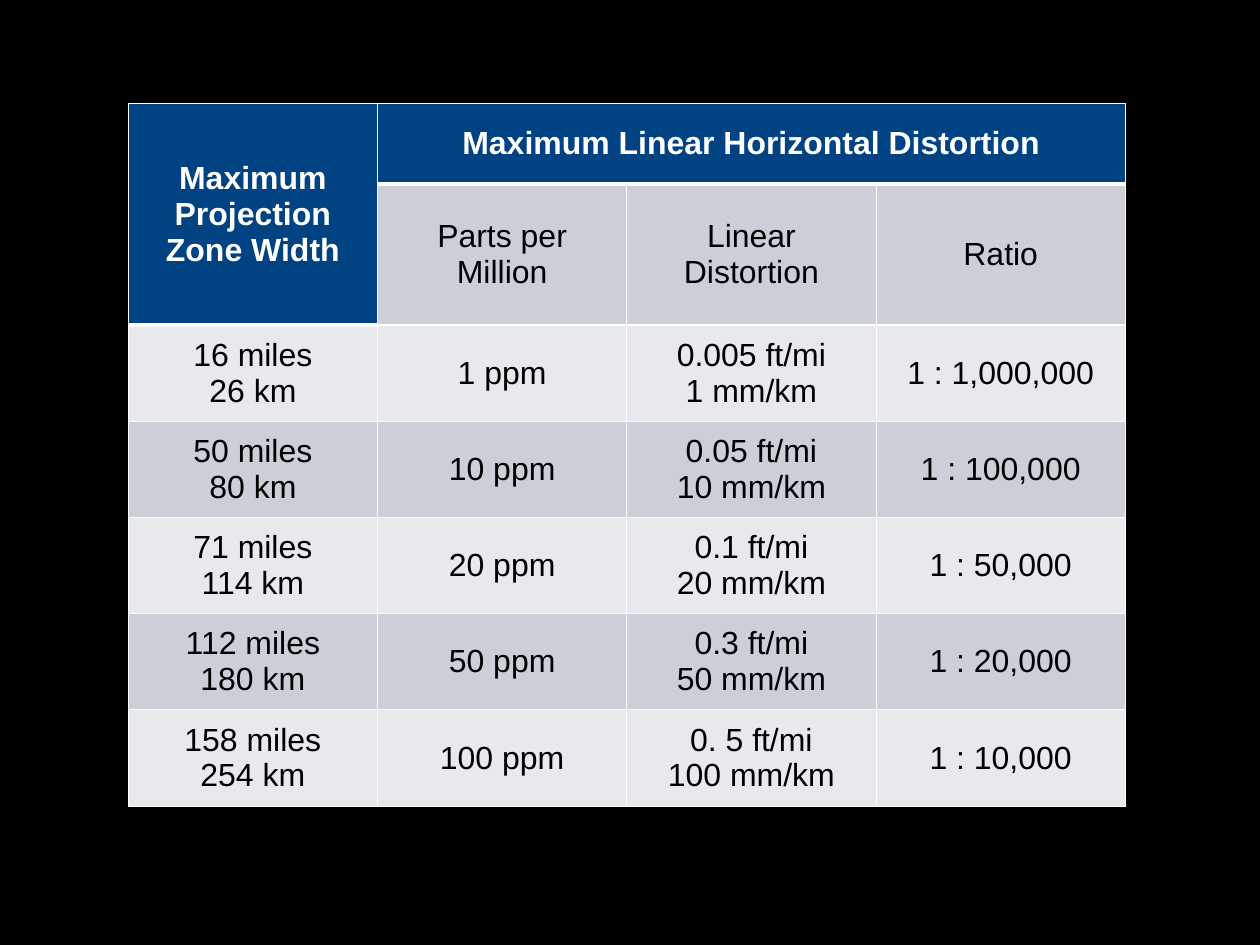
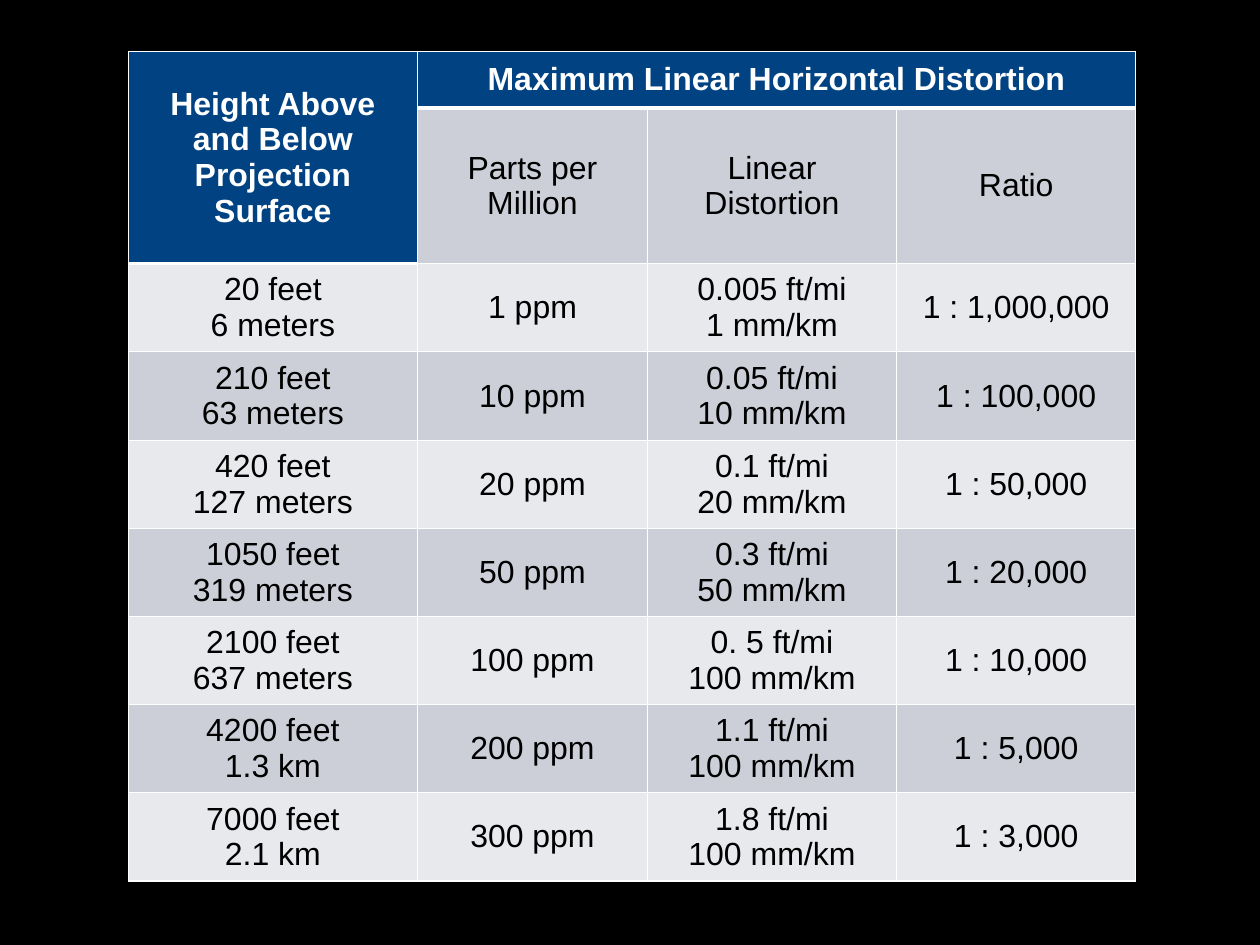
from dataclasses import dataclass

from lxml.etree import SubElement
from pptx import Presentation
from pptx.dml.color import RGBColor
from pptx.enum.text import MSO_ANCHOR, PP_ALIGN
from pptx.oxml.ns import qn
from pptx.presentation import Presentation as Deck
from pptx.table import _Cell as Cell
from pptx.util import Cm, Pt

BLACK = RGBColor(0x00, 0x00, 0x00)
WHITE = RGBColor(0xFF, 0xFF, 0xFF)
NAVY = RGBColor(0x00, 0x42, 0x82)
BAND_DARK = RGBColor(0xCC, 0xCF, 0xD8)
BAND_LIGHT = RGBColor(0xE7, 0xE9, 0xED)

FONT_NAME = "Arial"
FONT_SIZE = Pt(26)
THIN, THICK = Pt(1), Pt(3)
HEADER_ROWS = 2
BLANK_LAYOUT = 6

GROUP_HEADING = "Maximum Linear Horizontal Distortion"
SUBHEADINGS = ("Parts per Million", "Linear Distortion", "Ratio")

# Parts per million, linear distortion and ratio, from least to most distorted
DISTORTIONS = (
    ("1 ppm", "0.005 ft/mi\n1 mm/km", "1 : 1,000,000"),
    ("10 ppm", "0.05 ft/mi\n10 mm/km", "1 : 100,000"),
    ("20 ppm", "0.1 ft/mi\n20 mm/km", "1 : 50,000"),
    ("50 ppm", "0.3 ft/mi\n50 mm/km", "1 : 20,000"),
    ("100 ppm", "0. 5 ft/mi\n100 mm/km", "1 : 10,000"),
    ("200 ppm", "1.1 ft/mi\n100 mm/km", "1 : 5,000"),
    ("300 ppm", "1.8 ft/mi\n100 mm/km", "1 : 3,000"),
)


@dataclass(frozen=True)
class DistortionTable:
    """Lengths are in centimetres."""

    heading: str
    extents: tuple[str, ...]
    top: float
    column_widths: tuple[float, ...]
    header_heights: tuple[float, float]
    row_height: float
    left: float = 3.68


TABLES = (
    DistortionTable(
        heading="Maximum Projection Zone Width",
        extents=(
            "16 miles\n26 km",
            "50 miles\n80 km",
            "71 miles\n114 km",
            "112 miles\n180 km",
            "158 miles\n254 km",
        ),
        top=2.97,
        column_widths=(7.15,) * 4,
        header_heights=(2.31, 4.04),
        row_height=2.76,
    ),
    DistortionTable(
        heading="Height Above and Below Projection Surface",
        extents=(
            "20 feet\n6 meters",
            "210 feet\n63 meters",
            "420 feet\n127 meters",
            "1050 feet\n319 meters",
            "2100 feet\n637 meters",
            "4200 feet\n1.3 km",
            "7000 feet\n2.1 km",
        ),
        top=1.48,
        column_widths=(8.3, 6.59, 7.15, 6.86),
        header_heights=(1.62, 3.07),
        row_height=2.53,
    ),
)


def set_borders(cell: Cell, bottom_width: int) -> None:
    """Draw white borders; they must precede the fill in the cell properties."""
    properties = cell._tc.get_or_add_tcPr()
    widths = {"lnL": THIN, "lnR": THIN, "lnT": THIN, "lnB": bottom_width}
    for tag, width in widths.items():
        line = SubElement(properties, qn(f"a:{tag}"), w=str(int(width)))
        fill = SubElement(line, qn("a:solidFill"))
        SubElement(fill, qn("a:srgbClr"), val=str(WHITE))


def style_cell(cell: Cell, fill: RGBColor, is_heading: bool) -> None:
    set_borders(cell, THICK if is_heading else THIN)
    cell.fill.solid()
    cell.fill.fore_color.rgb = fill
    cell.vertical_anchor = MSO_ANCHOR.MIDDLE
    cell.margin_left = cell.margin_right = Cm(0.36)
    cell.margin_top = cell.margin_bottom = Cm(0.18)
    for paragraph in cell.text_frame.paragraphs:
        paragraph.alignment = PP_ALIGN.CENTER
        for run in paragraph.runs:
            run.font.name = FONT_NAME
            run.font.size = FONT_SIZE
            run.font.bold = is_heading
            run.font.color.rgb = WHITE if is_heading else BLACK


def add_distortion_slide(presentation: Deck, content: DistortionTable) -> None:
    slide = presentation.slides.add_slide(presentation.slide_layouts[BLANK_LAYOUT])
    row_count = len(content.extents)
    heights = (*content.header_heights, *[content.row_height] * row_count)
    widths = content.column_widths
    table = slide.shapes.add_table(
        len(heights), len(widths),
        Cm(content.left), Cm(content.top), Cm(sum(widths)), Cm(sum(heights)),
    ).table
    for column, width in zip(table.columns, widths):
        column.width = Cm(width)
    for row, height in zip(table.rows, heights):
        row.height = Cm(height)

    table.cell(0, 0).merge(table.cell(1, 0))
    table.cell(0, 1).merge(table.cell(0, len(widths) - 1))
    texts = [
        (content.heading, GROUP_HEADING, "", ""),
        ("", *SUBHEADINGS),
        *((extent, *values) for extent, values in zip(content.extents, DISTORTIONS)),
    ]
    for row_index, row_texts in enumerate(texts):
        band = BAND_LIGHT if row_index % 2 == 0 else BAND_DARK
        for column_index, text in enumerate(row_texts):
            cell = table.cell(row_index, column_index)
            is_heading = row_index == 0 or (
                row_index < HEADER_ROWS and column_index == 0
            )
            if text:
                cell.text_frame.text = text
            style_cell(cell, NAVY if is_heading else band, is_heading)


def main() -> None:
    presentation = Presentation()
    presentation.slide_width = Cm(36.14)
    presentation.slide_height = Cm(27.1)
    background = presentation.slide_master.background.fill
    background.solid()
    background.fore_color.rgb = BLACK
    for content in TABLES:
        add_distortion_slide(presentation, content)
    presentation.save("out.pptx")


if __name__ == "__main__":
    main()
